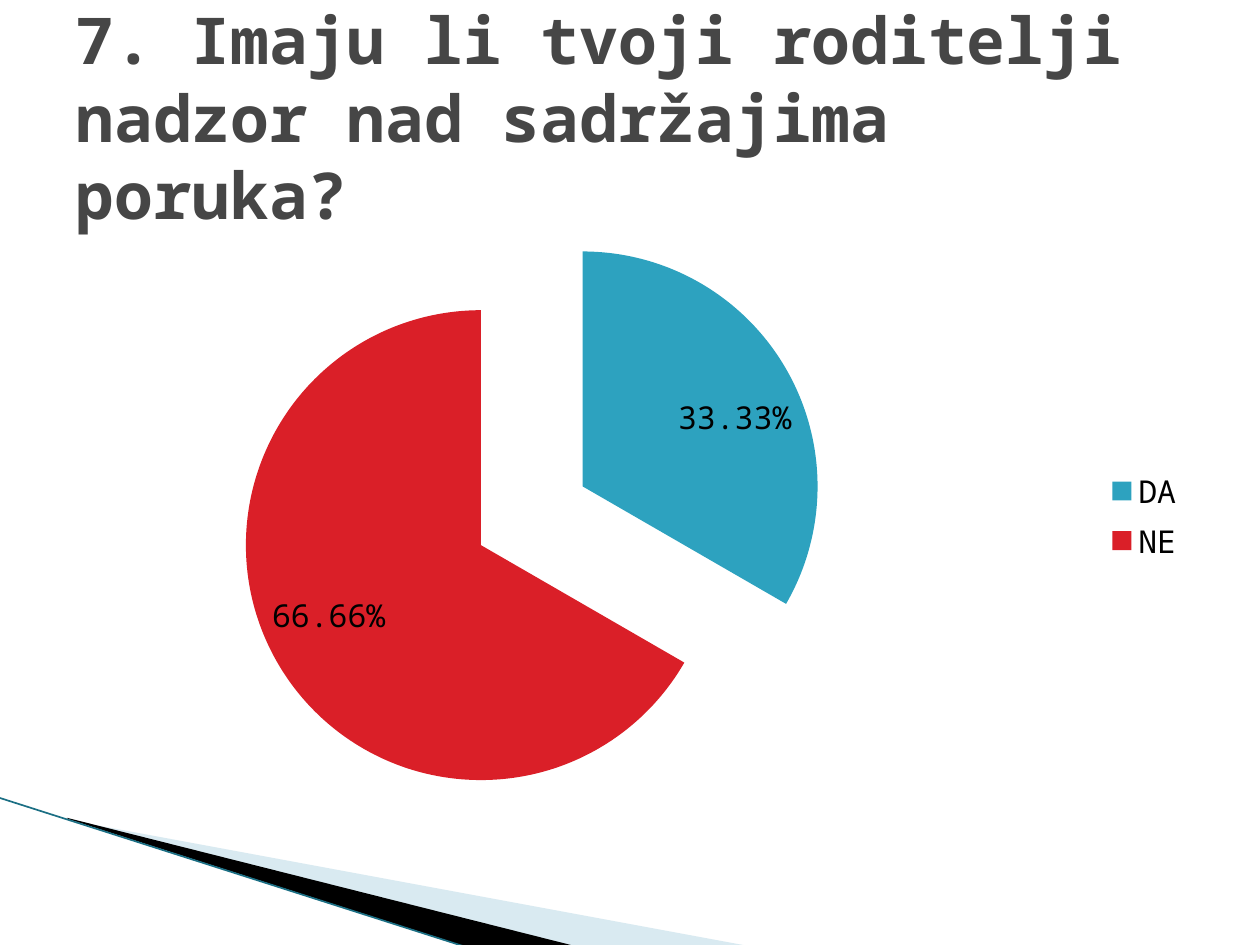
from lxml import etree
from pptx import Presentation
from pptx.chart.data import CategoryChartData
from pptx.dml.color import RGBColor
from pptx.enum.chart import XL_CHART_TYPE, XL_LABEL_POSITION, XL_LEGEND_POSITION
from pptx.enum.shapes import MSO_CONNECTOR
from pptx.enum.text import MSO_ANCHOR, PP_ALIGN
from pptx.oxml.ns import qn
from pptx.util import Pt

PIE = XL_CHART_TYPE.PIE
BEST = XL_LABEL_POSITION.BEST_FIT
RIGHT = XL_LEGEND_POSITION.RIGHT
STRAIGHT = MSO_CONNECTOR.STRAIGHT
MIDDLE = MSO_ANCHOR.MIDDLE
LEFT = PP_ALIGN.LEFT

FACE = "Noto Sans Mono"
HUES = {"title": "464646", "text": "000000", "DA": "2DA2BF", "NE": "DA1F28",
        "pale": "A0CBDC", "dark": "000000", "edge": "1B6F84"}

TITLE = "7. Imaju li tvoji roditelji nadzor nad sadržajima poruka?"
SHARES = {"DA": 0.3333, "NE": 0.6666}
EXPLODE = 25

# Corner wedges: colour, opacity in percent, frame, corners
WEDGES = [
    ("pale", 40, (56.2, 393.8, 299.5, 113.8),
     [(39.6, 468.7), (428.4, 540.7), (328.3, 540.7), (39.6, 468)]),
    ("dark", 100, (-4.3, 455.8, 299.5, 66.2),
     [(38.2, 467.3), (329, 540.7), (267.8, 541.4), (38.9, 468)]),
]
EDGE = (-0.7, 455.8, 267.1, 541.4)
TITLE_BOX = (36, 21.6, 648, 90)
CHART_BOX = (36, 116.6, 648, 356.4)
# Pie area as shares of the chart box
PIE_AREA = {"x": 0.154, "y": 0.029, "w": 0.519, "h": 0.942}


def color(name):
    return RGBColor.from_string(HUES[name])


def pts(box):
    return [Pt(n) for n in box]


def place(shape, box):
    shape.left, shape.top, shape.width, shape.height = pts(box)


def style(font, **form):
    form = {"name": FACE, **form}
    font.color.rgb = color(form.pop("hue"))
    for key, value in form.items():
        setattr(font, key, value)


def reframe(shape, box):
    """Give a freeform another frame while its corners stay in place."""
    shift = {"x": shape.left - Pt(box[0]), "y": shape.top - Pt(box[1])}
    place(shape, box)
    track = shape._element.find(".//" + qn("a:path"))
    track.set("w", str(shape.width))
    track.set("h", str(shape.height))
    for dot in track.iter(qn("a:pt")):
        for axis, gap in shift.items():
            dot.set(axis, str(int(dot.get(axis)) + gap))


def add_wedge(shapes, hue, alpha, box, dots):
    first, *rest = [tuple(pts(dot)) for dot in dots]
    pen = shapes.build_freeform(*first)
    pen.add_line_segments(rest, close=True)
    wedge = pen.convert_to_shape()
    reframe(wedge, box)
    wedge.shadow.inherit = False
    wedge.line.fill.background()
    wedge.fill.solid()
    wedge.fill.fore_color.rgb = color(hue)
    if alpha < 100:
        tint = wedge.fill._xPr.find(".//" + qn("a:srgbClr"))
        etree.SubElement(tint, qn("a:alpha")).set("val", str(alpha * 1000))


def add_edge(shapes):
    edge = shapes.add_connector(STRAIGHT, *pts(EDGE))
    edge.line.color.rgb = color("edge")
    edge.line.width = Pt(0.95)
    etree.SubElement(edge._element.spPr, qn("a:effectLst"))


def set_area(chart):
    area = chart._chartSpace.find(".//" + qn("c:plotArea"))
    layout = area.find(qn("c:layout"))
    if layout is None:
        layout = etree.Element(qn("c:layout"))
        area.insert(0, layout)
    manual = etree.SubElement(layout, qn("c:manualLayout"))
    rules = {"layoutTarget": "inner", "xMode": "edge", "yMode": "edge", **PIE_AREA}
    for tag, value in rules.items():
        etree.SubElement(manual, qn("c:" + tag)).set("val", str(value))


def add_pie(shapes):
    data = CategoryChartData(number_format="0.00%")
    data.categories = list(SHARES)
    data.add_series("Series 1", list(SHARES.values()))
    chart = shapes.add_chart(PIE, *pts(CHART_BOX), data).chart
    style(chart.font, size=Pt(18), hue="text")
    chart.has_title = False
    chart.has_legend = True
    chart.legend.position = RIGHT
    chart.legend.include_in_layout = False
    set_area(chart)

    plot = chart.plots[0]
    plot.vary_by_categories = True
    series = plot.series[0]
    for i, name in enumerate(SHARES):
        fill = series.points[i].format.fill
        fill.solid()
        fill.fore_color.rgb = color(name)
    burst = etree.Element(qn("c:explosion"))
    burst.set("val", str(EXPLODE))
    series._element.find(qn("c:dPt")).addprevious(burst)

    labels = series.data_labels
    form = {"show_value": True, "show_percentage": False, "position": BEST,
            "number_format": "0.00%", "number_format_is_linked": False}
    for key, value in form.items():
        setattr(labels, key, value)
    style(labels.font, size=Pt(18), hue="text")


def set_title(slide):
    title = slide.shapes.title
    place(title, TITLE_BOX)
    frame = title.text_frame
    frame.text = TITLE
    frame.word_wrap = True
    frame.vertical_anchor = MIDDLE
    para = frame.paragraphs[0]
    para.alignment = LEFT
    para.line_spacing = 1.0
    style(para.runs[0].font, size=Pt(36.9), bold=True, hue="title")
    slide.shapes._spTree.append(title._element)  # bring to front


def main():
    deck = Presentation()
    deck.slide_width, deck.slide_height = Pt(720), Pt(540)
    slide = deck.slides.add_slide(deck.slide_layouts[5])
    for wedge in WEDGES:
        add_wedge(slide.shapes, *wedge)
    add_edge(slide.shapes)
    add_pie(slide.shapes)
    set_title(slide)
    deck.save("out.pptx")


if __name__ == "__main__":
    main()
